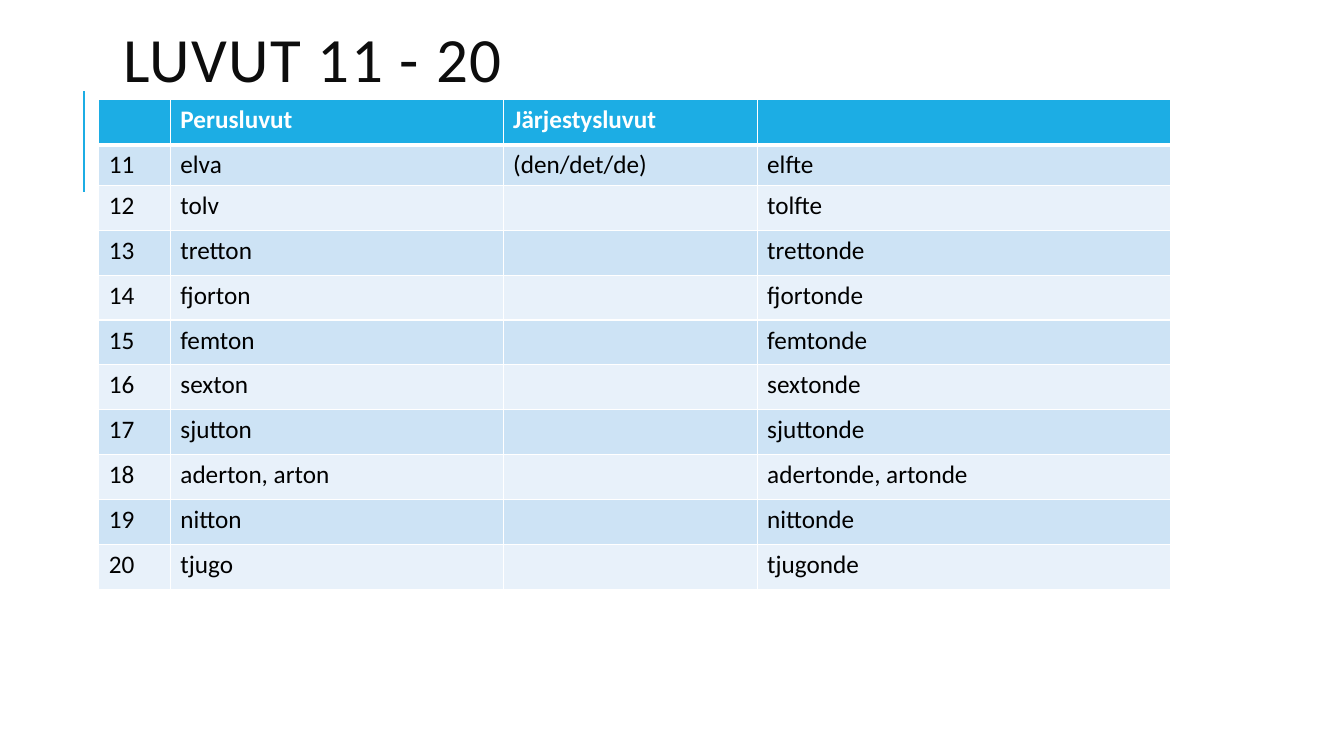
from dataclasses import dataclass

from lxml.etree import SubElement as Sub
from pptx import Presentation
from pptx.dml.color import RGBColor as Rgb
from pptx.enum.shapes import MSO_CONNECTOR as Link
from pptx.enum.text import MSO_ANCHOR as Anchor, MSO_AUTO_SIZE as Fit, PP_ALIGN as Align
from pptx.oxml.ns import qn
from pptx.slide import Slide
from pptx.table import _Cell as Cell
from pptx.text.text import _Paragraph as Para, _Run as Run
from pptx.util import Inches, Pt

FONT = "Calibri"
HEX = {
    "blue": "1CADE4",
    "odd": "CDE3F5",
    "even": "E8F1FA",
    "white": "FFFFFF",
    "black": "000000",
    "title": "0D0D0D",
}


@dataclass
class Number:
    value: int
    base: str
    rank: str
    note: str = ""


NUMBERS = [
    Number(11, "elva", "elfte", "(den/det/de)"),
    Number(12, "tolv", "tolfte"),
    Number(13, "tretton", "trettonde"),
    Number(14, "fjorton", "fjortonde"),
    Number(15, "femton", "femtonde"),
    Number(16, "sexton", "sextonde"),
    Number(17, "sjutton", "sjuttonde"),
    Number(18, "aderton, arton", "adertonde, artonde"),
    Number(19, "nitton", "nittonde"),
    Number(20, "tjugo", "tjugonde"),
]
HEADS = ["", "Perusluvut", "Järjestysluvut", ""]
WIDTHS = [0.71, 3.3, 2.52, 4.1]
HEIGHT = 4.85
FIRST = 0.37  # first body row, which grows to 0.4 to hold its text
TALL = (HEIGHT - 0.4) / len(NUMBERS)


def color(name: str) -> Rgb:
    return Rgb.from_string(HEX[name])


def add_run(para: Para, text: str, size: float, tint: str, bold: bool = False) -> Run:
    run = para.add_run()
    run.text = text
    run.font.name = FONT
    run.font.size = Pt(size)
    run.font.bold = bold
    run.font.color.rgb = color(tint)
    return run


def add_title(slide: Slide) -> None:
    title = slide.shapes.title
    title.left, title.top = Inches(1.12), Inches(0.15)
    title.width, title.height = Inches(10.63), Inches(0.97)
    frame = title.text_frame
    frame.word_wrap = True
    frame.auto_size = Fit.NONE
    frame.vertical_anchor = Anchor.MIDDLE
    para = frame.paragraphs[0]
    para.alignment = Align.LEFT
    para.line_spacing = 0.8
    run = add_run(para, "LUVUT 11 - 20", 45, "title")
    run.font._element.set("spc", "100")


def add_rule(slide: Slide) -> None:
    rule = slide.shapes.add_connector(
        Link.STRAIGHT, Inches(0.83), Inches(1.9), Inches(0.83), Inches(0.9)
    )
    rule.line.color.rgb = color("blue")
    rule.line.width = Pt(1.5)
    Sub(rule._element.spPr, qn("a:effectLst"))


def add_edges(cell: Cell, top: float, base: float) -> None:
    """Draw white cell borders; must run before the cell is filled."""
    props = cell._tc.get_or_add_tcPr()
    for tag, width in (("lnL", 1), ("lnR", 1), ("lnT", top), ("lnB", base)):
        edge = Sub(props, qn(f"a:{tag}"), w=str(Pt(width)))
        fill = Sub(edge, qn("a:solidFill"))
        Sub(fill, qn("a:srgbClr"), val=HEX["white"])


def add_grid(slide: Slide) -> None:
    rows = [HEADS] + [[str(n.value), n.base, n.note, n.rank] for n in NUMBERS]
    frame = slide.shapes.add_table(
        len(rows), len(WIDTHS), Inches(0.98), Inches(0.99),
        Inches(sum(WIDTHS)), Inches(HEIGHT),
    )
    table = frame.table
    for col, width in zip(table.columns, WIDTHS):
        col.width = Inches(width)
    for i, row in enumerate(rows):
        head = i == 0
        table.rows[i].height = Inches(FIRST if i == 1 else TALL)
        back = "blue" if head else "odd" if i % 2 else "even"
        for j, text in enumerate(row):
            cell = table.cell(i, j)
            add_edges(cell, 3 if i == 1 else 1, 3 if head else 1)
            cell.fill.solid()
            cell.fill.fore_color.rgb = color(back)
            para = cell.text_frame.paragraphs[0]
            para.font.size = Pt(18)
            if text:
                add_run(para, text, 18, "white" if head else "black", head)
    frame.height = Inches(HEIGHT)


def main() -> None:
    deck = Presentation()
    deck.slide_width, deck.slide_height = Inches(13.33), Inches(7.5)
    slide = deck.slides.add_slide(deck.slide_layouts[5])
    add_rule(slide)
    add_title(slide)
    add_grid(slide)
    deck.save("out.pptx")


if __name__ == "__main__":
    main()
